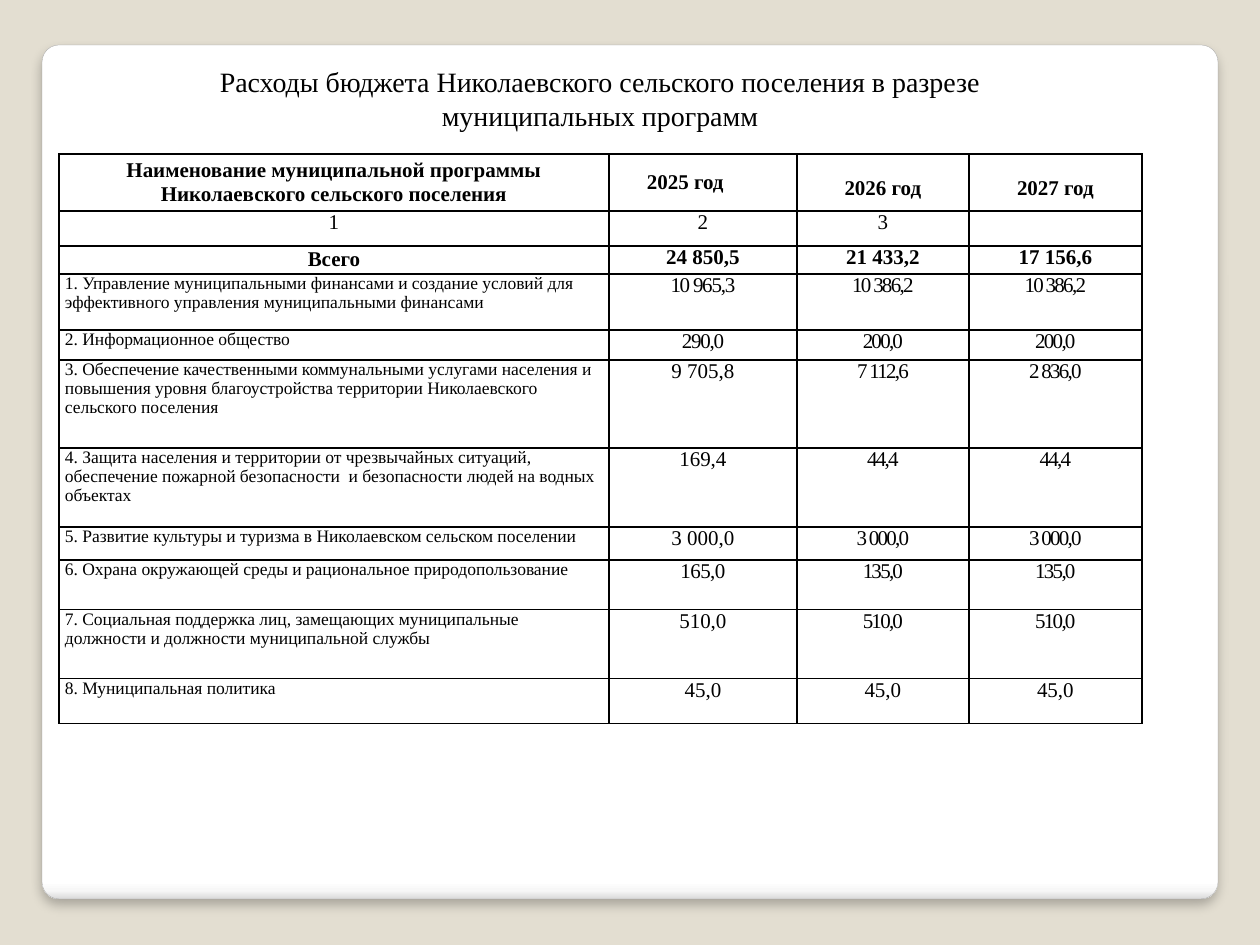
from lxml import etree
from pptx import Presentation
from pptx.dml.color import RGBColor
from pptx.enum.shapes import MSO_SHAPE
from pptx.enum.text import MSO_ANCHOR, MSO_AUTO_SIZE, PP_ALIGN
from pptx.oxml.ns import qn
from pptx.util import Pt

ROUND = MSO_SHAPE.ROUNDED_RECTANGLE
TOP, MIDDLE = MSO_ANCHOR.TOP, MSO_ANCHOR.MIDDLE
LEFT, CENTER = PP_ALIGN.LEFT, PP_ALIGN.CENTER
FIXED = MSO_AUTO_SIZE.NONE
SCALE = 914400 / 126
FONT = "Times New Roman"
BLACK = "000000"

COLS = [550, 188, 172, 173]
ROWS = [57, 35, 28, 56, 30, 88, 79, 33, 50, 69, 45]
HEAD = ["Наименование муниципальной программы Николаевского сельского поселения",
        "2025 год", "2026 год", "2027 год"]
COUNT = ["1", "2", "3", ""]
TOTAL = ["Всего", "24 850,5", "21 433,2", "17 156,6"]
ITEMS = [
    ("1. Управление муниципальными финансами и создание условий для эффективного управления муниципальными финансами",
     ["10 965,3", "10 386,2", "10 386,2"], -0.7, -1),
    ("2. Информационное общество",
     ["290,0", "200,0", "200,0"], -0.7, -1),
    ("3. Обеспечение качественными коммунальными услугами населения и повышения уровня благоустройства территории Николаевского сельского поселения",
     ["9 705,8", "7 112,6", "2 836,0"], 0, -1),
    ("4. Защита населения и территории от чрезвычайных ситуаций, обеспечение пожарной безопасности  и безопасности людей на водных объектах",
     ["169,4", "44,4", "44,4"], 0, -1),
    ("5. Развитие культуры и туризма в Николаевском сельском поселении",
     ["3 000,0", "3 000,0", "3 000,0"], 0, -1),
    ("6. Охрана окружающей среды и рациональное природопользование",
     ["165,0", "135,0", "135,0"], -0.3, -1),
    ("7. Социальная поддержка лиц, замещающих муниципальные должности и должности муниципальной службы",
     ["510,0", "510,0", "510,0"], 0, -1),
    ("8. Муниципальная политика",
     ["45,0", "45,0", "45,0"], 0, 0),
]


def px(n):
    return round(n * SCALE)


def color(code):
    return RGBColor.from_string(code)


def node(base, tag, **attrs):
    return etree.SubElement(base, qn(tag), {k: str(v) for k, v in attrs.items()})


def write(frame, text, size=12, bold=False, align=CENTER, gap=0):
    para = frame.paragraphs[0]
    para.alignment = align
    if not text:
        node(para._p, "a:endParaRPr", sz=size * 100)
        return
    run = para.add_run()
    run.text = text
    font = run.font
    font.name, font.size, font.bold = FONT, Pt(size), bold
    font.color.rgb = color(BLACK)
    if gap:
        run._r.get_or_add_rPr().set("spc", str(round(gap * 100)))


def inset(box, left, top, right, low):
    box.margin_left, box.margin_top = px(left), px(top)
    box.margin_right, box.margin_bottom = px(right), px(low)


def border(cell):
    props = cell._tc.get_or_add_tcPr()
    for spot, side in enumerate(("a:lnL", "a:lnR", "a:lnT", "a:lnB")):
        line = etree.Element(qn(side), w=str(Pt(1)))
        node(node(line, "a:solidFill"), "a:srgbClr", val=BLACK)
        props.insert(spot, line)


def fill_cell(cell, text, left=6, top=0, anchor=TOP, **style):
    cell.fill.background()
    border(cell)
    inset(cell, left, top, 6, 0)
    cell.vertical_anchor = anchor
    write(cell.text_frame, text, **style)


def add_panel(slide):
    panel = slide.shapes.add_shape(ROUND, px(42), px(45), px(1176), px(854))
    panel.adjustments[0] = 0.02
    panel.fill.gradient()
    panel.fill.gradient_angle = 270
    props = panel._element.spPr
    stops = props.find(".//" + qn("a:gsLst"))
    for stop in list(stops):
        stops.remove(stop)
    for pos, code in ((0, "FFFFFF"), (98, "FFFFFF"), (99, "F7F7F7"), (100, "DADADA")):
        node(node(stops, "a:gs", pos=pos * 1000), "a:srgbClr", val=code)
    panel.line.color.rgb = color("A4A4A4")
    panel.line.width = Pt(0.16)
    panel.shadow.inherit = False
    shade = node(props.find(qn("a:effectLst")), "a:outerShdw",
                 blurRad=Pt(6), dist=Pt(4), dir=5400000, algn="t", rotWithShape=0)
    node(node(shade, "a:srgbClr", val=BLACK), "a:alpha", val=25000)


def add_table(slide):
    shape = slide.shapes.add_table(len(ROWS), len(COLS), px(59), px(154),
                                   px(sum(COLS)), px(sum(ROWS)))
    table = shape.table
    table.first_row = table.horz_banding = False
    for col, width in zip(table.columns, COLS):
        col.width = px(width)
    for row, height in zip(table.rows, ROWS):
        row.height = px(height)

    fill_cell(table.cell(0, 0), HEAD[0], anchor=MIDDLE, bold=True)
    fill_cell(table.cell(0, 1), HEAD[1], left=38, anchor=MIDDLE, bold=True, align=LEFT)
    for col in (2, 3):
        fill_cell(table.cell(0, col), HEAD[col], top=23, bold=True)
    for col, text in enumerate(COUNT):
        fill_cell(table.cell(1, col), text)
    for col, text in enumerate(TOTAL):
        fill_cell(table.cell(2, col), text, bold=True, anchor=TOP if col else MIDDLE)
    for row, (name, sums, first, rest) in enumerate(ITEMS, 3):
        fill_cell(table.cell(row, 0), name, size=10, align=LEFT)
        for col, (text, gap) in enumerate(zip(sums, (first, rest, rest)), 1):
            fill_cell(table.cell(row, col), text, gap=gap)


def set_title(slide, text):
    title = slide.shapes.title
    title.left, title.top, title.width, title.height = px(108), px(59), px(984), px(81)
    frame = title.text_frame
    frame.word_wrap = True
    frame.auto_size = FIXED
    frame.vertical_anchor = TOP
    inset(frame, 40, 6, 40, 6)
    write(frame, text, size=16)
    slide.shapes._spTree.append(title._element)


def main():
    deck = Presentation()
    deck.slide_width, deck.slide_height = px(1260), px(945)
    slide = deck.slides.add_slide(deck.slide_layouts[5])
    back = slide.background.fill
    back.solid()
    back.fore_color.rgb = color("E3DED1")
    add_panel(slide)
    add_table(slide)
    set_title(slide, "Расходы бюджета Николаевского сельского поселения в разрезе муниципальных программ")
    deck.save("out.pptx")


if __name__ == "__main__":
    main()
